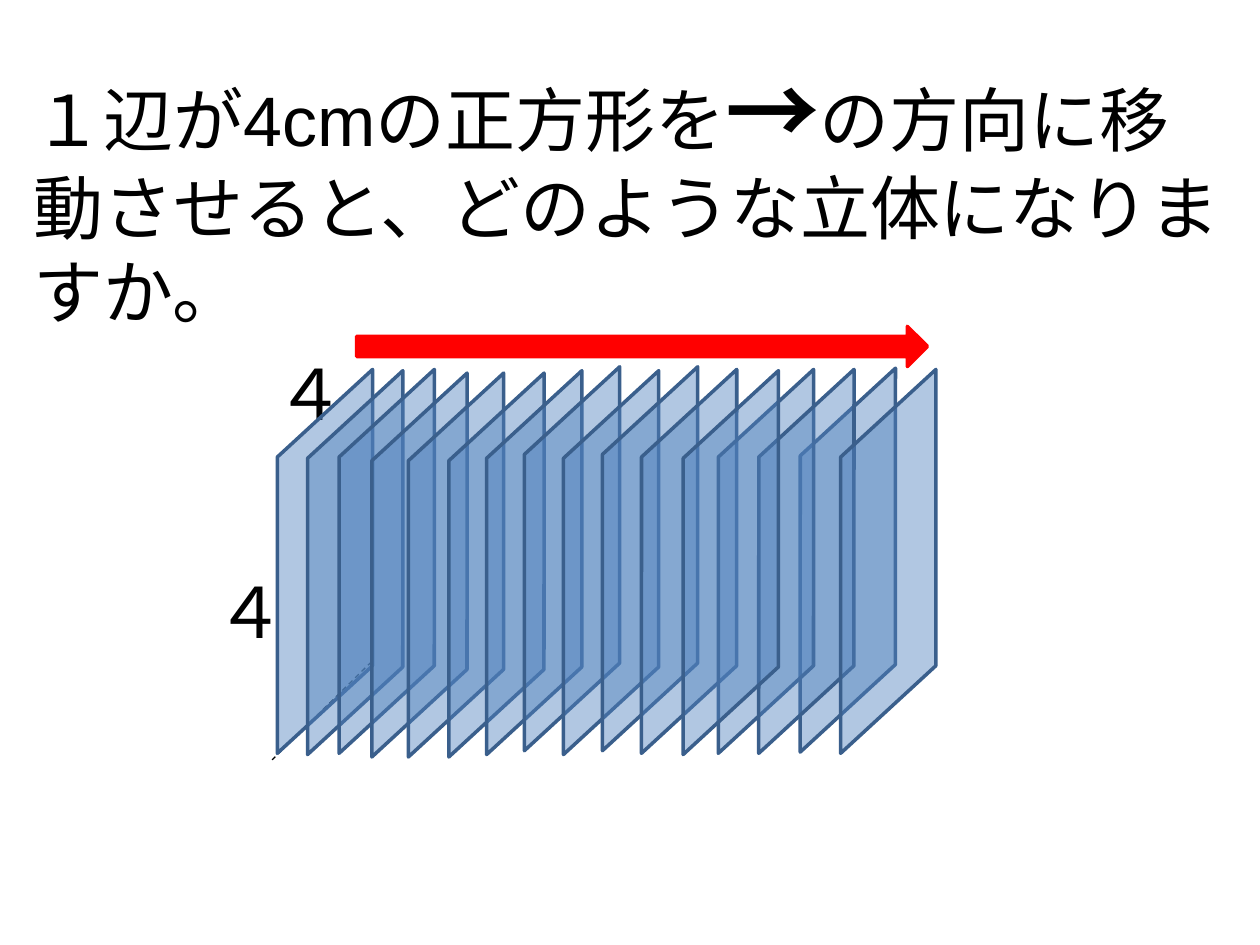
"""Build a slide asking which solid a moving square sweeps out."""
from lxml import etree
from pptx import Presentation
from pptx.dml.color import RGBColor
from pptx.enum import dml, shapes, text
from pptx.oxml import ns
from pptx.util import Pt

COLORS = {"text": "000000", "square": "4F81BD", "edge": "3A5F8C", "arrow": "FF0000"}
QUESTION = [
    ("１辺が4cmの正方形を", 40, False),
    ("→", 54, True),
    ("の方向に移動させると、どのような立体になりますか。", 40, False),
]
SQUARES = [
    (91.4, 258.5), (108.7, 259.2), (126.7, 258.5), (145.4, 260.6),
    (166.3, 260.6), (189.4, 260.6), (211, 259.2), (232.6, 257),
    (254.9, 259.2), (390.2, 257.8), (277.2, 257), (299.5, 258.5),
    (343.4, 258.5), (366.5, 258.5), (413.3, 258.5), (323.3, 259.2),
]


def rgb(name):
    """Return a named colour."""
    return RGBColor.from_string(COLORS[name])


def add_text(s, box, parts, wrap):
    """Add a text box made of (text, size, bold) runs."""
    tf = s.shapes.add_textbox(*map(Pt, box)).text_frame
    tf.word_wrap = wrap
    tf.auto_size = text.MSO_AUTO_SIZE.SHAPE_TO_FIT_TEXT
    p = tf.paragraphs[0]
    for words, size, bold in parts:
        r = p.add_run()
        r.text = words
        r.font.name = "Arial"
        r.font.size = Pt(size)
        r.font.bold = bold
        r.font.color.rgb = rgb("text")


def add_dashed_line(s, start, end):
    """Add a thin dashed line for a hidden edge."""
    line = s.shapes.add_connector(
        shapes.MSO_CONNECTOR.STRAIGHT, *map(Pt, start + end))
    line.line.color.rgb = rgb("text")
    line.line.width = Pt(0.75)
    line.line.dash_style = dml.MSO_LINE.DASH
    etree.SubElement(line._element.spPr, ns.qn("a:effectLst"))


def add_shape(s, kind, box, fill, edge):
    """Add a filled and outlined preset shape."""
    sp = s.shapes.add_shape(kind, *map(Pt, box))
    sp.shadow.inherit = False
    sp.fill.solid()
    sp.fill.fore_color.rgb = rgb(fill)
    sp.line.color.rgb = rgb(edge)
    sp.line.width = Pt(2)
    return sp


def add_square(s, left, top):
    """Add one translucent square seen at an angle."""
    sp = add_shape(s, shapes.MSO_SHAPE.PARALLELOGRAM,
                   (left, top, 188.6, 124.6), "square", "edge")
    sp.rotation = 317.4
    sp.adjustments[0] = 0.92
    color = sp.fill._xPr.find(".//" + ns.qn("a:srgbClr"))
    etree.SubElement(color, ns.qn("a:alpha"), val="44000")


def main():
    """Build and save the slide."""
    prs = Presentation()
    prs.slide_width, prs.slide_height = Pt(720), Pt(540)
    s = prs.slides.add_slide(prs.slide_layouts[6])
    add_text(s, (12.2, 25.9, 692, 121), QUESTION, True)
    corner = (212.4, 378)
    add_dashed_line(s, (212.4, 213.1), corner)
    add_dashed_line(s, corner, (155.5, 434.2))
    for left, top in [(115.9, 321.1), (150.5, 196.6)]:
        add_text(s, (left, top, 41.8, 55.4), [("４", 40, False)], False)
    for left, top in SQUARES:
        add_square(s, left, top)
    add_shape(s, shapes.MSO_SHAPE.RIGHT_ARROW,
              (203.8, 186.5, 326.2, 23), "arrow", "arrow")
    prs.save("out.pptx")


if __name__ == "__main__":
    main()
